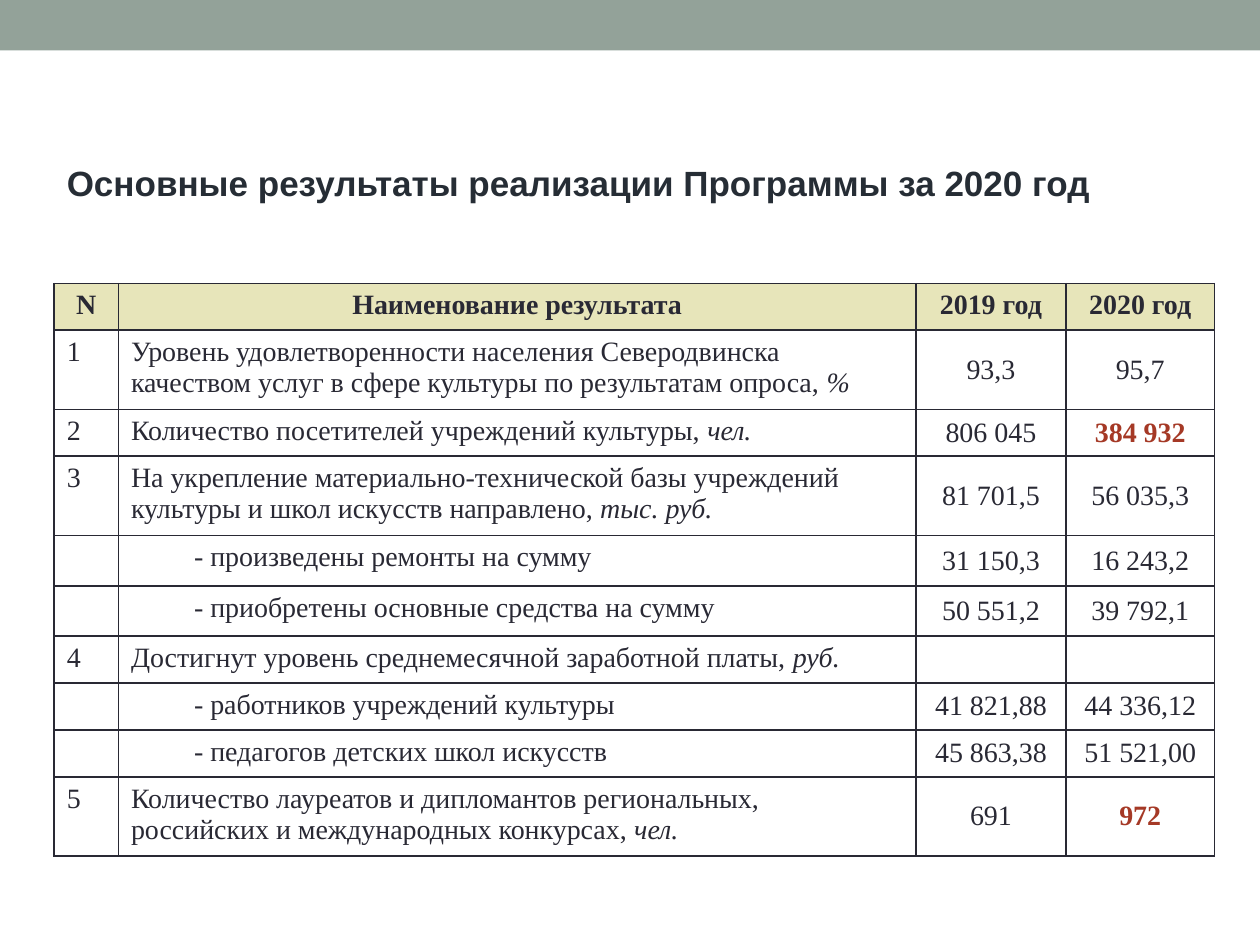
from lxml import etree
from pptx import Presentation
from pptx.dml.color import RGBColor
from pptx.enum import shapes, text
from pptx.oxml.ns import qn
from pptx.util import Inches, Pt

WHITE = RGBColor(0xFF, 0xFF, 0xFF)
SAGE = RGBColor(0x93, 0xA2, 0x99)
TITLE_INK = RGBColor(0x26, 0x2D, 0x35)
INK = RGBColor(0x29, 0x29, 0x34)
RED = RGBColor(0xA5, 0x39, 0x26)
CREAM = RGBColor(0xE7, 0xE5, 0xBA)

COLUMN_WIDTHS = [0.51, 6.33, 1.19, 1.18]
ROW_HEIGHTS = [0.37, 0.63, 0.37, 0.63, 0.4, 0.4, 0.37, 0.37, 0.37, 0.63]
HEADINGS = ["N", "Наименование результата", "2019 год", "2020 год"]

# Number, result, unit, value for 2019, value for 2020
RESULTS = [
    ("1", "Уровень удовлетворенности населения Северодвинска качеством услуг "
          "в сфере культуры по результатам опроса, ", "%", "93,3", "95,7"),
    ("2", "Количество посетителей учреждений культуры, ", "чел.",
     "806 045", "384 932"),
    ("3", "На укрепление материально-технической базы учреждений культуры "
          "и школ искусств направлено, ", "тыс. руб.", "81 701,5", "56 035,3"),
    ("", "- произведены ремонты на сумму", "", "31 150,3", "16 243,2"),
    ("", "- приобретены основные средства на сумму", "", "50 551,2", "39 792,1"),
    ("4", "Достигнут уровень среднемесячной заработной платы, ", "руб.", "", ""),
    ("", "- работников учреждений культуры", "", "41 821,88", "44 336,12"),
    ("", "- педагогов детских школ искусств", "", "45 863,38", "51 521,00"),
    ("5", "Количество лауреатов и дипломантов региональных, российских "
          "и международных конкурсах, ", "чел.", "691", "972"),
]
HIGHLIGHTS = {"384 932", "972"}


def add_span(para, words, size=16, font="Times New Roman", color=INK,
             bold=False, italic=False):
    span = para.add_run()
    span.text = words
    span.font.size = Pt(size)
    span.font.name = font
    span.font.color.rgb = color
    span.font.bold = bold
    span.font.italic = italic


def add_band(page):
    band = page.shapes.add_shape(shapes.MSO_SHAPE.RECTANGLE, 0, 0,
                                 Inches(10), Inches(0.4))
    band.shadow.inherit = False
    band.fill.solid()
    band.fill.fore_color.rgb = SAGE
    band.line.fill.background()


def set_title(page, words):
    title = page.shapes.title
    title.left, title.top = Inches(0.43), Inches(1.23)
    title.width, title.height = Inches(8.98), Inches(0.44)
    frame = title.text_frame
    frame.word_wrap = True
    frame.auto_size = text.MSO_AUTO_SIZE.NONE
    frame.vertical_anchor = text.MSO_ANCHOR.TOP
    para = frame.paragraphs[0]
    para.alignment = text.PP_ALIGN.LEFT
    add_span(para, words, size=20, font="Arial", color=TITLE_INK, bold=True)


def style_cell(cell, fill):
    properties = cell._tc.get_or_add_tcPr()
    for side in ("a:lnL", "a:lnR", "a:lnT", "a:lnB"):
        line = etree.SubElement(properties, qn(side), w=str(Pt(1)))
        solid = etree.SubElement(line, qn("a:solidFill"))
        etree.SubElement(solid, qn("a:srgbClr"), val=str(INK))
    cell.fill.solid()
    cell.fill.fore_color.rgb = fill


def fill_cell(cell, words, unit="", centered=False, middle=False,
              fill=WHITE, **font):
    style_cell(cell, fill)
    para = cell.text_frame.paragraphs[0]
    para.font.size = Pt(16)
    if centered:
        para.alignment = text.PP_ALIGN.CENTER
    if middle:
        cell.vertical_anchor = text.MSO_ANCHOR.MIDDLE
    if words.startswith("- "):
        para.level = 1
        properties = para._p.get_or_add_pPr()
        properties.set("marL", str(Inches(0.5)))
        properties.set("indent", "0")
    if words:
        add_span(para, words, **font)
    else:
        # Keeps empty rows from growing to the default text size
        etree.SubElement(para._p, qn("a:endParaRPr"), sz="1600")
    if unit:
        add_span(para, unit, italic=True)


def add_results_table(page):
    frame = page.shapes.add_table(
        len(ROW_HEIGHTS), len(COLUMN_WIDTHS), Inches(0.43), Inches(2.25),
        Inches(sum(COLUMN_WIDTHS)), Inches(sum(ROW_HEIGHTS)))
    table = frame.table
    for column, width in zip(table.columns, COLUMN_WIDTHS):
        column.width = Inches(width)
    for row, height in zip(table.rows, ROW_HEIGHTS):
        row.height = Inches(height)

    for index, heading in enumerate(HEADINGS):
        fill_cell(table.cell(0, index), heading, centered=True, fill=CREAM,
                  bold=True)
    for row, (number, result, unit, *values) in enumerate(RESULTS, start=1):
        fill_cell(table.cell(row, 0), number)
        fill_cell(table.cell(row, 1), result, unit)
        for column, value in enumerate(values, start=2):
            marked = value in HIGHLIGHTS
            fill_cell(table.cell(row, column), value, centered=True,
                      middle=True, bold=marked, color=RED if marked else INK)


def main():
    deck = Presentation()
    deck.slide_width, deck.slide_height = Inches(10), Inches(7.5)
    page = deck.slides.add_slide(deck.slide_layouts[5])
    add_band(page)
    set_title(page, "Основные результаты реализации Программы за 2020 год")
    add_results_table(page)
    deck.save("out.pptx")


if __name__ == "__main__":
    main()
